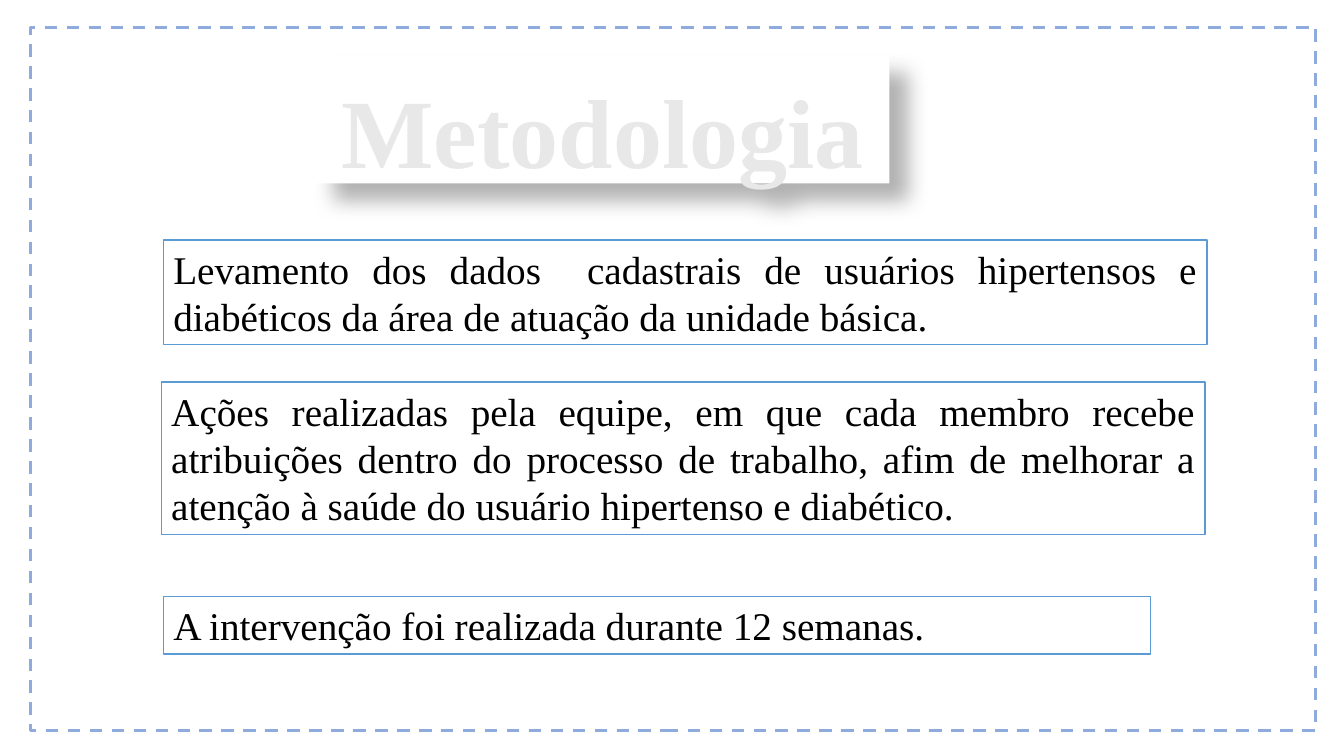
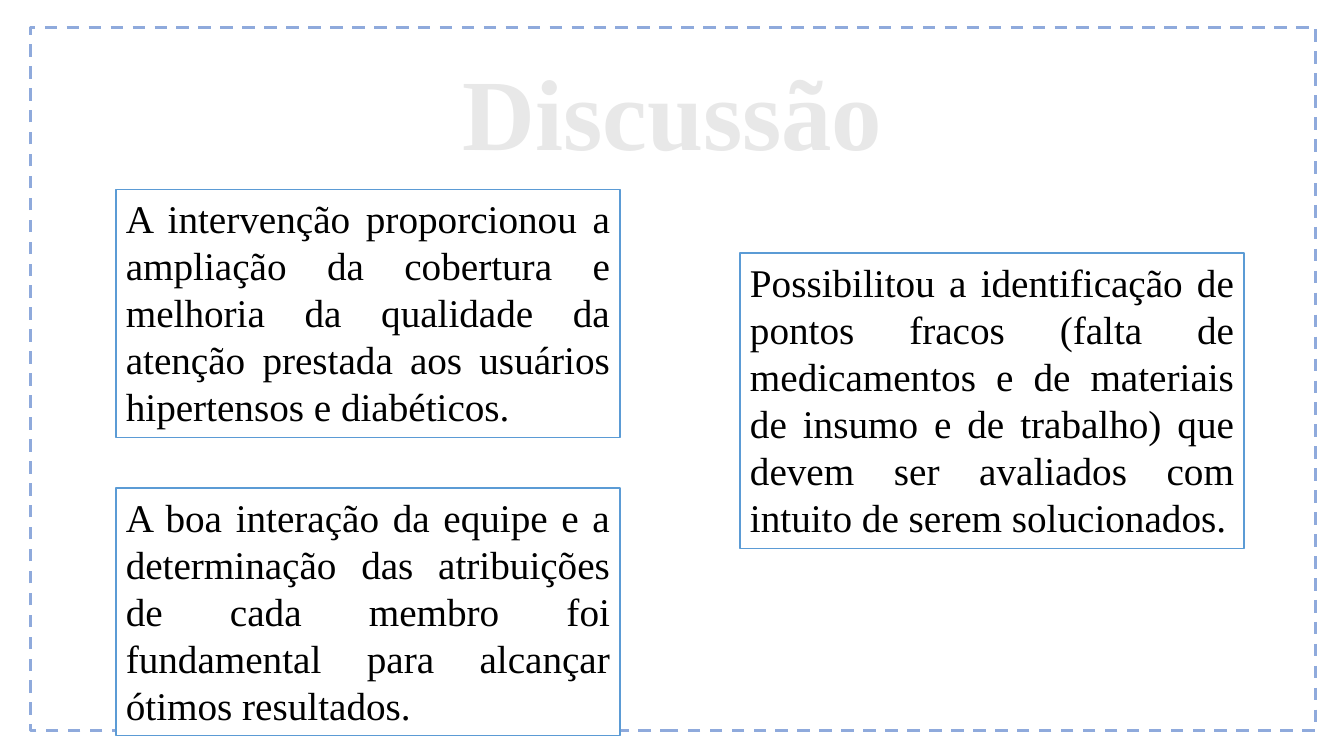
from dataclasses import dataclass

from lxml.etree import SubElement
from pptx import Presentation
from pptx.dml.color import RGBColor
from pptx.enum.dml import MSO_LINE
from pptx.enum.shapes import MSO_SHAPE
from pptx.enum.text import MSO_ANCHOR, MSO_AUTO_SIZE, PP_ALIGN
from pptx.oxml.ns import qn
from pptx.util import Inches, Pt

COLORS = {
    "paper": "FFFFFF",
    "frame": "8FAADC",
    "outline": "5B9BD5",
    "title": "E8E8E8",
    "text": "000000",
}
FONT = "Times New Roman"
TITLE_FORMAT = {"name": FONT, "bold": True}
BODY_FORMAT = {"name": FONT, "size": Pt(28)}
TITLE_FRAME = {
    "word_wrap": False,
    "auto_size": MSO_AUTO_SIZE.NONE,
    "vertical_anchor": MSO_ANCHOR.TOP,
    "margin_left": 0,
    "margin_right": 0,
    "margin_bottom": 0,
}
BODY_FRAME = {
    "word_wrap": True,
    "auto_size": MSO_AUTO_SIZE.SHAPE_TO_FIT_TEXT,
    "vertical_anchor": MSO_ANCHOR.TOP,
}


@dataclass(frozen=True)
class Area:
    left: float
    top: float
    width: float
    height: float

    def lengths(self):
        return [Inches(v) for v in (self.left, self.top, self.width, self.height)]


@dataclass(frozen=True)
class Statement:
    area: Area
    text: str
    align: PP_ALIGN = PP_ALIGN.JUSTIFY


@dataclass(frozen=True)
class Heading:
    text: str
    area: Area
    size: float
    margin_top: float
    raised: bool = False


@dataclass(frozen=True)
class Topic:
    heading: Heading
    statements: tuple[Statement, ...]


BORDER = Area(0.3, 0.27, 12.75, 6.98)
TOPICS = (
    Topic(
        Heading("Metodologia", Area(3.13, 0.54, 5.69, 1.28), 70, 0.16, raised=True),
        (
            Statement(
                Area(1.62, 2.38, 10.35, 1.04),
                "Levamento dos dados  cadastrais de usuários hipertensos e "
                "diabéticos da área de atuação da unidade básica.",
            ),
            Statement(
                Area(1.6, 3.79, 10.35, 1.51),
                "Ações realizadas pela equipe, em que cada membro recebe "
                "atribuições dentro do processo de trabalho, afim de melhorar "
                "a atenção à saúde do usuário hipertenso e diabético.",
            ),
            Statement(
                Area(1.62, 5.92, 9.79, 0.57),
                "A intervenção foi realizada durante 12 semanas.",
                PP_ALIGN.LEFT,
            ),
        ),
    ),
    Topic(
        Heading("Discussão", Area(4.17, 0.44, 5, 1.25), 72, 0.05),
        (
            Statement(
                Area(1.15, 1.88, 5, 2.46),
                "A intervenção proporcionou a ampliação da cobertura e melhoria "
                "da qualidade da atenção prestada aos usuários hipertensos e "
                "diabéticos.",
            ),
            Statement(
                Area(7.34, 2.51, 5, 2.93),
                "Possibilitou a identificação de pontos fracos (falta de "
                "medicamentos e de materiais de insumo e de trabalho) que devem "
                "ser avaliados com intuito de serem solucionados.",
            ),
            Statement(
                Area(1.15, 4.84, 5, 2.46),
                "A boa interação da equipe e a determinação das atribuições de "
                "cada membro foi fundamental para alcançar ótimos resultados.",
            ),
        ),
    ),
)


def rgb(name: str) -> RGBColor:
    return RGBColor.from_string(COLORS[name])


def apply(target, values: dict) -> None:
    for attribute, value in values.items():
        setattr(target, attribute, value)


def fill_paper(shape) -> None:
    shape.fill.solid()
    shape.fill.fore_color.rgb = rgb("paper")


def write(shape, text: str, align, color: str, frame: dict, font: dict) -> None:
    apply(shape.text_frame, frame)
    paragraph = shape.text_frame.paragraphs[0]
    paragraph.alignment = align
    run = paragraph.add_run()
    run.text = text
    apply(run.font, font)
    run.font.color.rgb = rgb(color)


def add_rectangle(slide, area: Area, color: str, weight: float):
    rectangle = slide.shapes.add_shape(MSO_SHAPE.RECTANGLE, *area.lengths())
    rectangle.shadow.inherit = False
    rectangle.line.color.rgb = rgb(color)
    rectangle.line.width = Pt(weight)
    return rectangle


def add_border(slide) -> None:
    border = add_rectangle(slide, BORDER, "frame", 2.25)
    border.fill.background()
    border.line.dash_style = MSO_LINE.DASH


def add_statement(slide, statement: Statement) -> None:
    box = add_rectangle(slide, statement.area, "outline", 1)
    fill_paper(box)
    write(box, statement.text, statement.align, "text", BODY_FRAME, BODY_FORMAT)


def cast_shadow(shape) -> None:
    effects = SubElement(shape._element.spPr, qn("a:effectLst"))
    shadow = SubElement(
        effects,
        qn("a:outerShdw"),
        blurRad=str(Pt(15)),
        dist=str(Pt(18)),
        dir=str(45 * 60000),
        algn="tl",
        rotWithShape="0",
    )
    color = SubElement(shadow, qn("a:srgbClr"), val=COLORS["text"])
    SubElement(color, qn("a:alpha"), val="30000")


def set_heading(slide, heading: Heading) -> None:
    title = slide.shapes.title
    sides = ("left", "top", "width", "height")
    apply(title, dict(zip(sides, heading.area.lengths())))
    frame = {**TITLE_FRAME, "margin_top": Inches(heading.margin_top)}
    font = {**TITLE_FORMAT, "size": Pt(heading.size)}
    write(title, heading.text, PP_ALIGN.CENTER, "title", frame, font)
    if heading.raised:
        fill_paper(title)
        cast_shadow(title)


def add_topic(presentation, topic: Topic) -> None:
    slide = presentation.slides.add_slide(presentation.slide_layouts[5])
    set_heading(slide, topic.heading)
    add_border(slide)
    for statement in topic.statements:
        add_statement(slide, statement)


def main() -> None:
    presentation = Presentation()
    presentation.slide_width = Inches(13.33)
    presentation.slide_height = Inches(7.5)
    for topic in TOPICS:
        add_topic(presentation, topic)
    presentation.save("out.pptx")


if __name__ == "__main__":
    main()
